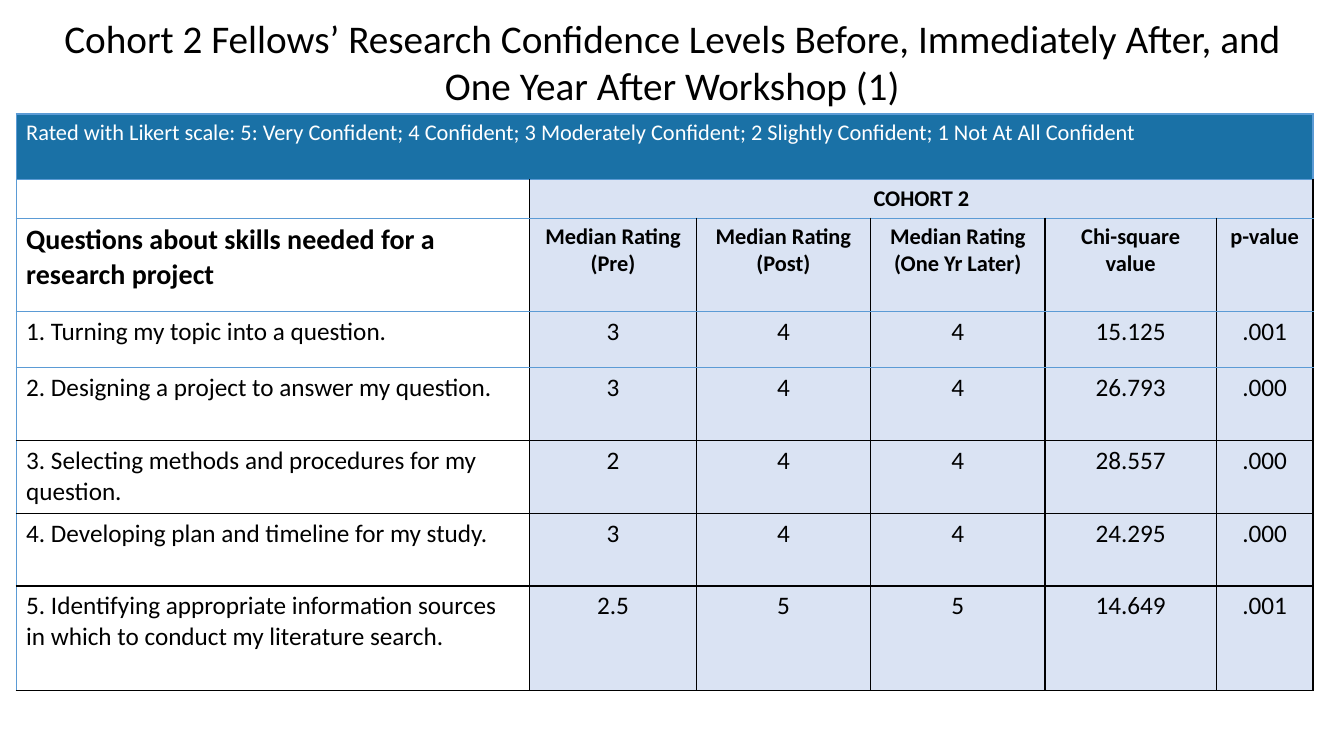
from pptx import Presentation
from pptx.dml.color import RGBColor
from pptx.enum.text import MSO_ANCHOR, MSO_AUTO_SIZE, PP_ALIGN
from pptx.oxml.ns import qn
from pptx.util import Pt
from lxml.etree import SubElement

COLORS = {"text": "000000", "white": "FFFFFF", "banner": "1A71A6",
          "ratings": "DAE3F3", "blue_line": "5B9BD5", "black_line": "000000"}
FORMATS = {
    "title": {"size": Pt(28), "bold": False},
    "banner": {"size": Pt(16), "bold": False},
    "heading": {"size": Pt(16), "bold": True},
    "questions": {"size": Pt(20), "bold": True},
    "body": {"size": Pt(18), "bold": False},
}
TITLE = ("Cohort 2 Fellows’ Research Confidence Levels Before, "
         "Immediately After, and One Year After Workshop (1)")
COL_WIDTHS = [367, 118.8, 124.6, 124.6, 122.4, 69]
ROW_HEIGHTS = [47, 27.4, 67, 39.8, 52, 52, 52, 74.5]
ROWS = [
    ["Rated with Likert scale: 5: Very Confident; 4 Confident; 3 Moderately "
     "Confident; 2 Slightly Confident; 1 Not At All Confident"] + [""] * 5,
    ["", "COHORT 2"] + [""] * 4,
    ["Questions about skills needed for a research project",
     "Median Rating\n(Pre)", "Median Rating\n(Post)",
     "Median Rating\n(One Yr Later)", "Chi-square value", "p-value"],
    ["1. Turning my topic into a question.", "3", "4", "4", "15.125", ".001"],
    ["2. Designing a project to answer my question.",
     "3", "4", "4", "26.793", ".000"],
    ["3. Selecting methods and procedures for my question.",
     "2", "4", "4", "28.557", ".000"],
    ["4. Developing plan and timeline for my study.",
     "3", "4", "4", "24.295", ".000"],
    ["5. Identifying appropriate information sources in which to conduct my "
     "literature search.", "2.5", "5", "5", "14.649", ".001"],
]


def write_text(tf, text, style, color, align):
    tf.text = text
    for p in tf.paragraphs:
        p.alignment = align
        for r in p.runs:
            r.font.name = "Calibri"
            r.font.color.rgb = RGBColor.from_string(COLORS[color])
            for name, value in FORMATS[style].items():
                setattr(r.font, name, value)


def set_borders(cell, borders):
    """Draw 1 pt borders; borders maps the sides L, R, T, B to colour names."""
    tcPr = cell._tc.get_or_add_tcPr()
    for side, color in borders.items():
        ln = SubElement(tcPr, qn("a:ln" + side), w=str(Pt(1)))
        fill = SubElement(ln, qn("a:solidFill"))
        SubElement(fill, qn("a:srgbClr"), val=COLORS[color])


def cell_borders(row, col):
    def line(is_blue):
        return "blue_line" if is_blue else "black_line"
    return {"L": line(row == 0 or col == 0), "R": line(row == 0),
            "T": line(row <= 4), "B": line(row <= 3)}


def cell_style(row, col):
    if row == 0:
        return "banner"
    if row > 2:
        return "body"
    return "heading" if col else "questions"


def fill_cell(cell, row, col, text):
    if text:
        write_text(cell.text_frame, text, cell_style(row, col),
                   "text" if row else "white",
                   PP_ALIGN.CENTER if col else PP_ALIGN.LEFT)
    else:
        cell.margin_top = cell.margin_bottom = 0
    set_borders(cell, cell_borders(row, col))
    if row and not col:
        cell.fill.background()
    else:
        cell.fill.solid()
        name = "ratings" if row else "banner"
        cell.fill.fore_color.rgb = RGBColor.from_string(COLORS[name])


def add_title(s):
    sp = s.shapes.title
    box = {"left": 23, "top": 6.5, "width": 914.4, "height": 75}
    for name, value in box.items():
        setattr(sp, name, Pt(value))
    tf = sp.text_frame
    write_text(tf, TITLE, "title", "text", PP_ALIGN.CENTER)
    tf.word_wrap = True
    tf.auto_size = MSO_AUTO_SIZE.NONE
    tf.vertical_anchor = MSO_ANCHOR.MIDDLE


def add_ratings_table(s):
    frame = s.shapes.add_table(len(ROWS), len(COL_WIDTHS), Pt(11.5), Pt(81.4),
                               Pt(sum(COL_WIDTHS)), Pt(sum(ROW_HEIGHTS)))
    table = frame.table
    table.first_row = table.horz_banding = False
    for column, width in zip(table.columns, COL_WIDTHS):
        column.width = Pt(width)
    for table_row, height in zip(table.rows, ROW_HEIGHTS):
        table_row.height = Pt(height)
    for row, texts in enumerate(ROWS):
        for col, text in enumerate(texts):
            fill_cell(table.cell(row, col), row, col, text)
    for row in (0, 1):
        table.cell(row, row).merge(table.cell(row, len(COL_WIDTHS) - 1))


def main():
    prs = Presentation()
    prs.slide_width, prs.slide_height = Pt(960), Pt(540)
    s = prs.slides.add_slide(prs.slide_layouts[5])
    add_ratings_table(s)
    add_title(s)
    prs.save("out.pptx")


if __name__ == "__main__":
    main()
